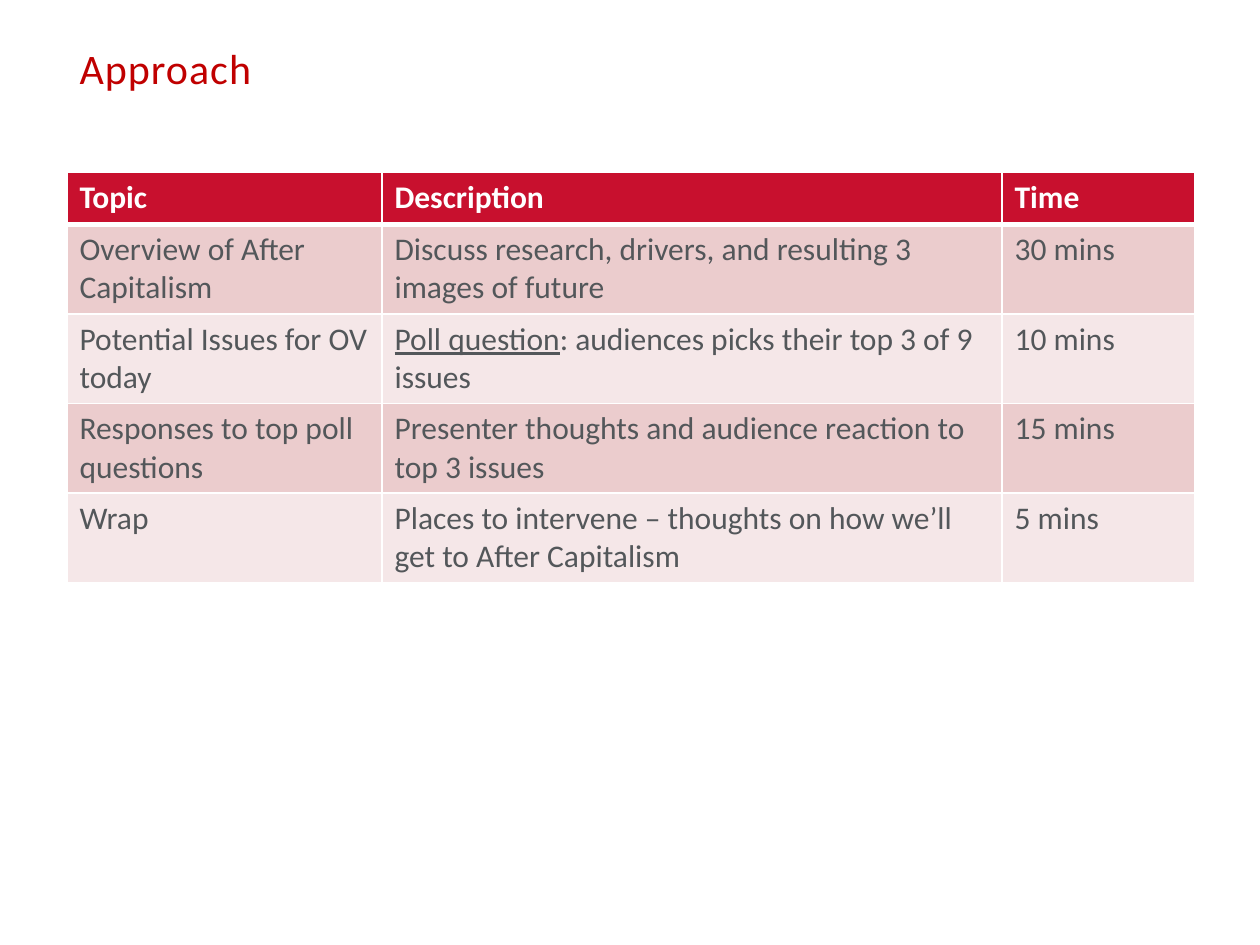
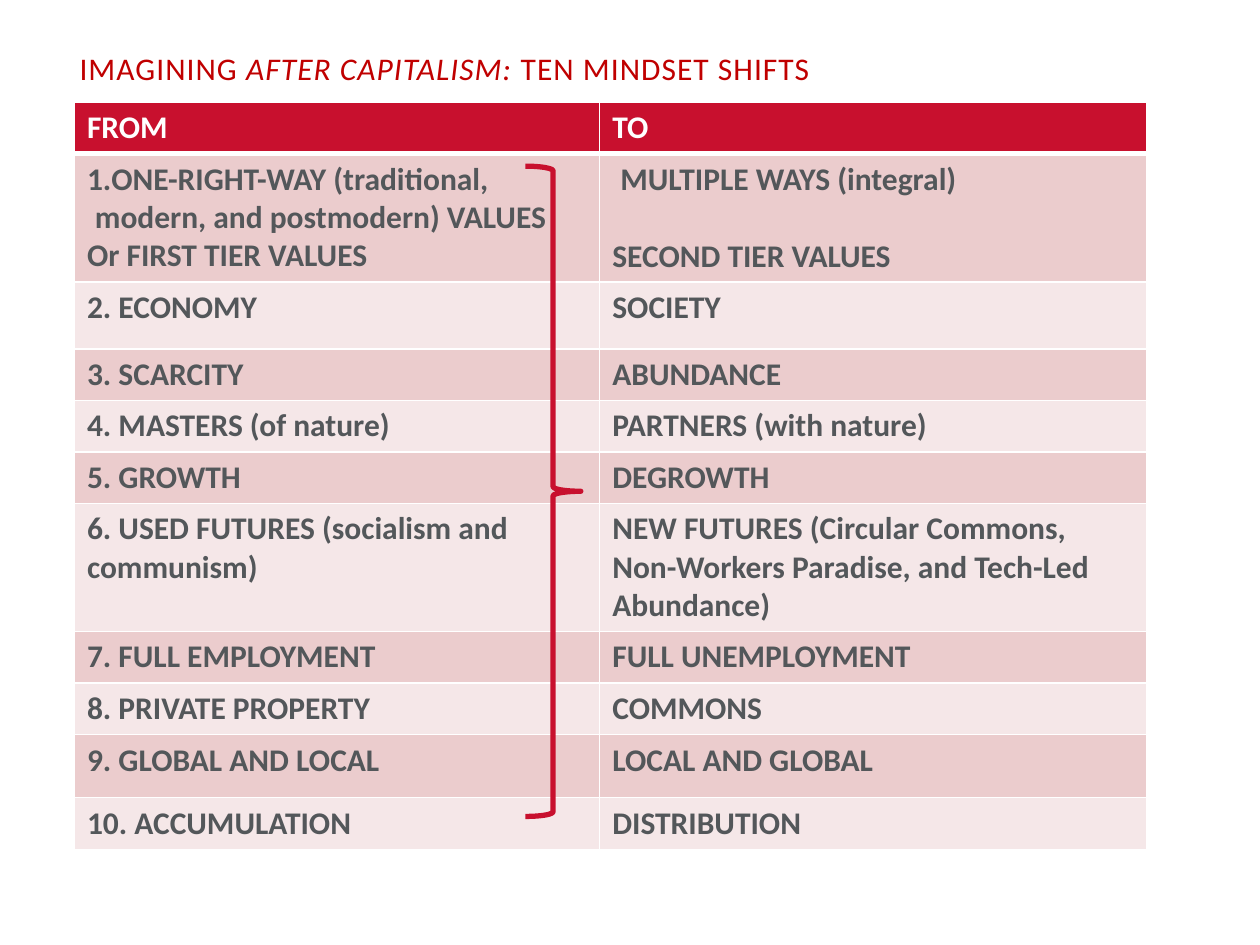
"""Build two table slides on the approach and mindset shifts of After Capitalism."""
from lxml import etree
from pptx import Presentation
from pptx import util as u
from pptx.dml.color import RGBColor
from pptx.enum import shapes, text
from pptx.oxml import ns

COLORS = {
    "title": "C00000",
    "header": "C8102E",
    "odd_row": "EBCCCD",
    "even_row": "F5E7E8",
    "body": "53575A",
    "white": "FFFFFF",
}
FONT = "Calibri"
TABLE_TEXT_SIZE = 18
LINE_ROW = 1.04

AGENDA = [
    ("Topic", "Description", "Time"),
    ("Overview of After Capitalism",
     "Discuss research, drivers, and resulting 3 images of future", "30 mins"),
    ("Potential Issues for OV today",
     "_Poll question_: audiences picks their top 3 of 9 issues", "10 mins"),
    ("Responses to top poll questions",
     "Presenter thoughts and audience reaction to top 3 issues", "15 mins"),
    ("Wrap",
     "Places to intervene – thoughts on how we’ll get to After Capitalism", "5 mins"),
]
SHIFTS = [
    ("FROM", "TO"),
    ("ONE-RIGHT-WAY (traditional, modern, and postmodern) VALUES\nOr FIRST TIER VALUES",
     "MULTIPLE WAYS (integral)\nSECOND TIER VALUES"),
    ("2. ECONOMY", "SOCIETY"),
    ("3. SCARCITY", "ABUNDANCE"),
    ("4. MASTERS (of nature)", "PARTNERS (with nature)"),
    ("5. GROWTH", "DEGROWTH"),
    ("6. USED FUTURES (socialism and communism)",
     "NEW FUTURES (Circular Commons, Non-Workers Paradise, and Tech-Led Abundance)"),
    ("7. FULL EMPLOYMENT", "FULL UNEMPLOYMENT"),
    ("8. PRIVATE PROPERTY", "COMMONS"),
    ("9. GLOBAL AND LOCAL", "LOCAL AND GLOBAL"),
    ("10. ACCUMULATION", "DISTRIBUTION"),
]


def color(name):
    return RGBColor.from_string(COLORS[name])


def add_runs(paragraph, marked, emphasis):
    for index, piece in enumerate(marked.split("_")):
        if piece:
            run = paragraph.add_run()
            run.text = piece
            if index % 2:
                setattr(run.font, emphasis, True)


def set_font(paragraph, size, color_name, bold=False):
    font = paragraph.font
    font.name, font.size, font.bold = FONT, u.Pt(size), bold
    font.color.rgb = color(color_name)


def add_titled_slide(presentation, marked, size):
    slide = presentation.slides.add_slide(presentation.slide_layouts[5])
    title = slide.shapes.title
    title.left, title.top, title.width, title.height = map(u.Cm, (1.35, 0, 22.73, 2.74))
    title.text_frame.vertical_anchor = text.MSO_ANCHOR.MIDDLE
    paragraph = title.text_frame.paragraphs[0]
    paragraph.alignment = text.PP_ALIGN.LEFT
    add_runs(paragraph, marked, "italic")
    set_font(paragraph, size, "title")
    for run in paragraph.runs:
        run.font._element.set("spc", "60")
    return slide


def set_borders(cell, row):
    widths = {"L": 1, "R": 1, "T": 3 if row == 1 else 1, "B": 3 if row == 0 else 1}
    properties = cell._tc.get_or_add_tcPr()
    for side, width in widths.items():
        line = etree.SubElement(properties, ns.qn(f"a:ln{side}"), w=str(u.Pt(width)))
        fill = etree.SubElement(line, ns.qn("a:solidFill"))
        etree.SubElement(fill, ns.qn("a:srgbClr"), val=COLORS["white"])


def set_indent(paragraph, left, first=0.0, numbered=False):
    properties = paragraph._p.get_or_add_pPr()
    properties.set("marL", str(u.Cm(left)))
    properties.set("indent", str(u.Cm(first)))
    if numbered:
        font = properties.find(ns.qn("a:defRPr"))
        number = etree.Element(ns.qn("a:buAutoNum"), type="arabicPeriod")
        font.addprevious(number)


def fill_cell(cell, content, row, bold):
    set_borders(cell, row)
    cell.fill.solid()
    fill_name = "header" if row == 0 else "odd_row" if row % 2 else "even_row"
    cell.fill.fore_color.rgb = color(fill_name)
    for index, line in enumerate(content.split("\n")):
        frame = cell.text_frame
        paragraph = frame.add_paragraph() if index else frame.paragraphs[0]
        add_runs(paragraph, line, "underline")
        set_font(paragraph, TABLE_TEXT_SIZE, "body" if row else "white", bold or row == 0)


def add_grid(slide, rows, left, top, widths, heights, bold=False):
    frame = slide.shapes.add_table(
        len(rows), len(widths), u.Cm(left), u.Cm(top), u.Cm(sum(widths)), u.Cm(sum(heights)))
    table = frame.table
    for column, width in zip(table.columns, widths):
        column.width = u.Cm(width)
    for row, (contents, height) in enumerate(zip(rows, heights)):
        table.rows[row].height = u.Cm(height)
        for column, content in enumerate(contents):
            fill_cell(table.cell(row, column), content, row, bold)
    return table


def add_brace(slide, left, top, width, height):
    brace = slide.shapes.add_shape(
        shapes.MSO_SHAPE.RIGHT_BRACE, *map(u.Cm, (left, top, width, height)))
    brace.shadow.inherit = False
    brace.fill.background()
    brace.line.color.rgb = color("header")
    brace.line.width = u.Pt(3)


def build_approach(presentation):
    slide = add_titled_slide(presentation, "Approach", 24)
    add_grid(slide, AGENDA, 1.35, 3.48, [6.35, 12.5, 3.89], [LINE_ROW] + [1.8] * 4)


def build_shifts(presentation):
    slide = add_titled_slide(
        presentation, "IMAGINING _AFTER CAPITALISM: _TEN MINDSET SHIFTS", 18)
    heights = [LINE_ROW] * len(SHIFTS)
    heights[1] = heights[6] = 2.58
    heights[2], heights[9] = 1.35, 1.27
    table = add_grid(slide, SHIFTS, 1.5, 2.06, [10.59, 11.02], heights, bold=True)
    set_indent(table.cell(1, 0).text_frame.paragraphs[0], 0.16, -0.97, numbered=True)
    multiple_ways, second_tier = table.cell(1, 1).text_frame.paragraphs
    set_indent(multiple_ways, 0.16)
    second_tier.space_before = u.Pt(22)
    add_brace(slide, 10.59, 3.35, 1.12, 13.11)


def main():
    presentation = Presentation()
    presentation.slide_width, presentation.slide_height = u.Cm(25.4), u.Cm(19.05)
    build_approach(presentation)
    build_shifts(presentation)
    presentation.save("out.pptx")


if __name__ == "__main__":
    main()
